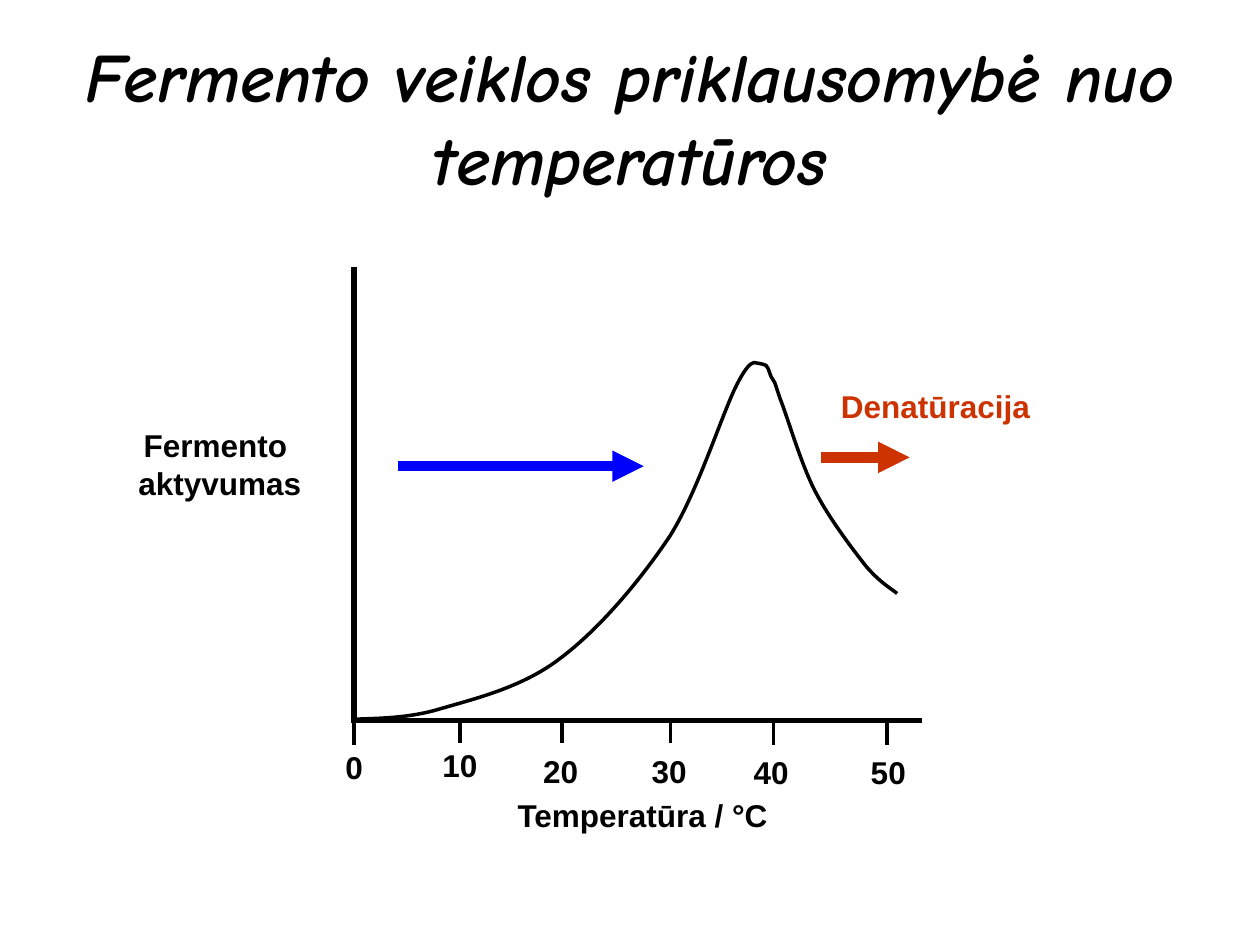
from dataclasses import dataclass

from lxml import etree
from pptx import Presentation
from pptx.dml.color import RGBColor
from pptx.enum import shapes, text
from pptx.oxml.ns import qn
from pptx.util import Pt

PX = 9144  # EMU per px, 100 px to the inch
BLACK = RGBColor(0x00, 0x00, 0x00)
BLUE = RGBColor(0x00, 0x00, 0xFF)
RED = RGBColor(0xCC, 0x33, 0x00)


@dataclass
class Label:
    words: str
    x: int
    y: int
    w: int
    h: int
    color: RGBColor = BLACK
    size: float = 18
    font: str = "Arial"
    italic: bool = False
    anchor: text.MSO_ANCHOR = text.MSO_ANCHOR.TOP


@dataclass
class Line:
    x1: int
    y1: int
    x2: int
    y2: int
    width: int
    color: RGBColor = BLACK
    arrow: bool = False


@dataclass
class Tick:
    x: int
    y: int
    left: int
    top: int


def add_label(slide, item: Label) -> None:
    box = slide.shapes.add_textbox(*(n * PX for n in (item.x, item.y, item.w, item.h)))
    frame = box.text_frame
    frame.word_wrap = True
    frame.vertical_anchor = item.anchor
    frame.text = item.words
    for para in frame.paragraphs:
        para.alignment = text.PP_ALIGN.CENTER
        font = para.font
        font.name, font.size = item.font, Pt(item.size)
        font.bold, font.italic = True, item.italic
        font.color.rgb = item.color


def add_line(slide, item: Line) -> None:
    ends = (n * PX for n in (item.x1, item.y1, item.x2, item.y2))
    line = slide.shapes.add_connector(shapes.MSO_CONNECTOR.STRAIGHT, *ends)
    line.line.color.rgb = item.color
    line.line.width = Pt(item.width)
    if item.arrow:
        tail = etree.SubElement(line.line._get_or_add_ln(), qn("a:tailEnd"))
        tail.set("type", "triangle")
    etree.SubElement(line._element.spPr, qn("a:effectLst"))


def add_curve(slide, points: list[tuple[int, int]], width: int) -> None:
    """Draw Bezier segments: a start, then two controls and an end for each."""
    pen = slide.shapes.build_freeform(*points[0], scale=PX)
    pen.add_line_segments(points[1:], close=False)
    curve = pen.convert_to_shape()
    curve.shadow.inherit = False
    curve.fill.background()
    curve.line.color.rgb = BLACK
    curve.line.width = Pt(width)
    # Join every three straight steps into one cubic segment
    route = next(curve._element.iter(qn("a:path")))
    steps = route.findall(qn("a:lnTo"))
    for i in range(0, len(steps), 3):
        bend = etree.SubElement(route, qn("a:cubicBezTo"))
        for step in steps[i:i + 3]:
            bend.append(step[0])
            route.remove(step)


TITLE = Label("Fermento veiklos priklausomybė nuo temperatūros", 50, 30, 900, 125,
              size=39.6, font="Comic Neue", italic=True,
              anchor=text.MSO_ANCHOR.MIDDLE)
LABELS = [
    Label("Temperatūra / °C", 263, 627, 494, 41),
    Label("Fermento \naktyvumas", 91, 333, 167, 79),
    Label("Denatūracija", 651, 302, 183, 40, RED),
]
AXES = [Line(281, 212, 281, 574, 3), Line(732, 572, 282, 572, 3)]
ARROWS = [
    Line(316, 370, 511, 370, 6, BLUE, True),
    Line(652, 363, 722, 363, 6, RED, True),
]
TICKS = [
    Tick(281, 573, 254, 589), Tick(365, 572, 338, 587), Tick(446, 572, 418, 592),
    Tick(532, 572, 504, 592), Tick(614, 573, 585, 593), Tick(704, 573, 678, 593),
]
CURVE = [
    (280, 571),
    (292, 570), (321, 571), (348, 563),
    (375, 555), (414, 546), (444, 523),
    (475, 500), (508, 461), (532, 425),
    (555, 388), (574, 325), (586, 303),
    (598, 280), (601, 290), (605, 289),
    (610, 289), (610, 295), (612, 299),
    (615, 303), (614, 301), (619, 316),
    (625, 331), (635, 366), (646, 388),
    (657, 410), (676, 435), (687, 449),
    (698, 462), (707, 467), (712, 471),
]


def main() -> None:
    deck = Presentation()
    deck.slide_width, deck.slide_height = 1000 * PX, 750 * PX
    slide = deck.slides.add_slide(deck.slide_layouts[6])

    # Title and axes
    add_label(slide, TITLE)
    for axis in AXES:
        add_line(slide, axis)

    # Temperature scale
    for i, tick in enumerate(TICKS):
        add_line(slide, Line(tick.x, tick.y, tick.x, tick.y + 18, 2))
        add_label(slide, Label(str(i * 10), tick.left, tick.top, 54, 46))

    # Activity curve, arrows and captions
    add_curve(slide, CURVE, 2)
    for arrow in ARROWS:
        add_line(slide, arrow)
    for label in LABELS:
        add_label(slide, label)

    deck.save("out.pptx")


if __name__ == "__main__":
    main()
